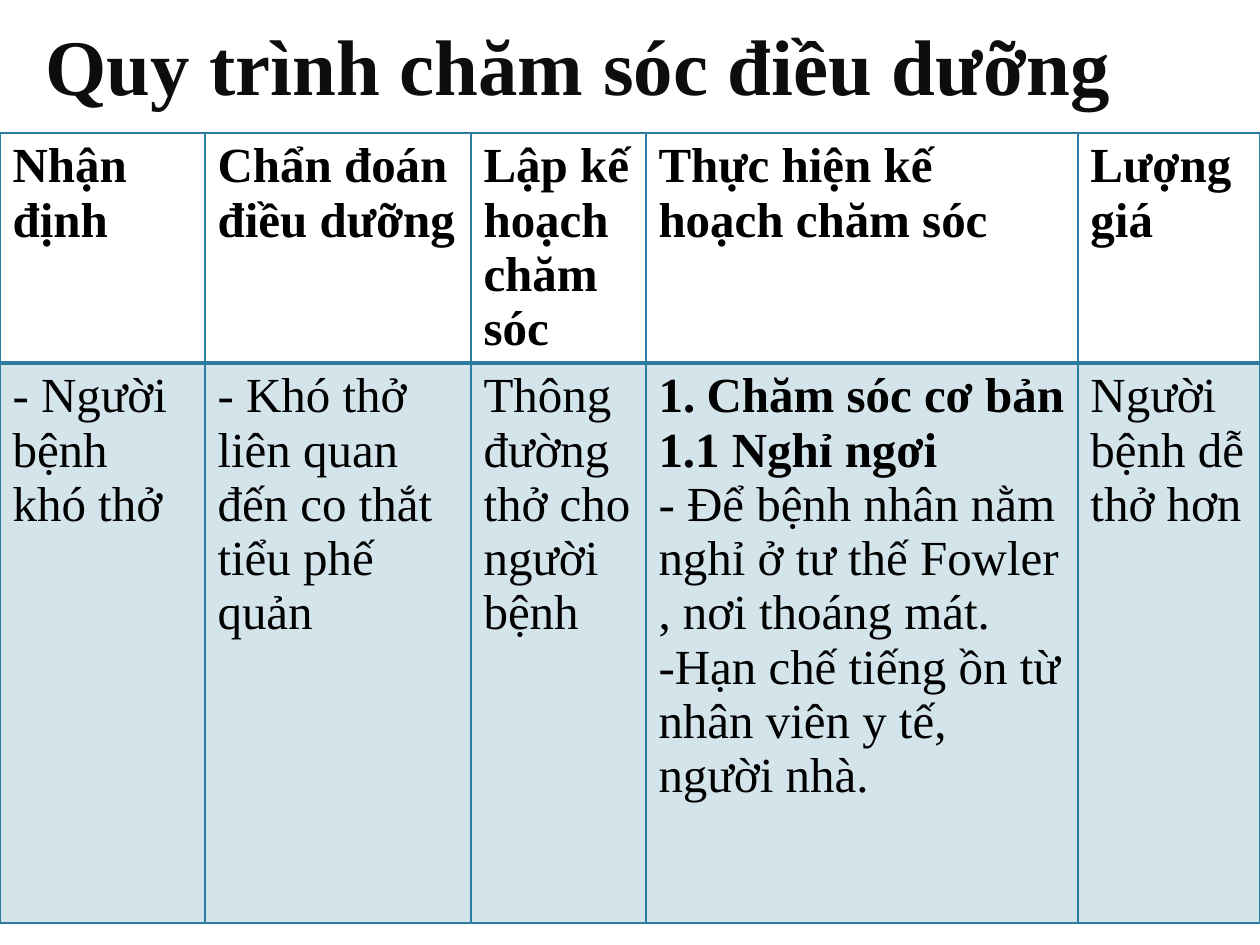
from lxml import etree
from pptx import Presentation
from pptx.dml.color import RGBColor
from pptx.enum.text import MSO_ANCHOR, MSO_AUTO_SIZE, PP_ALIGN
from pptx.oxml.ns import qn
from pptx.util import Emu, Pt

BOTTOM, JUSTIFY = MSO_ANCHOR.BOTTOM, PP_ALIGN.JUSTIFY
NO_FIT = MSO_AUTO_SIZE.NONE
PX = 914400 // 126
FONT = "Times New Roman"
COLORS = {"title": "0D0D0D", "text": "000000", "accent": "2C7C9F"}

TITLE = "Quy trình chăm sóc điều dưỡng"
TITLE_BOX = {"left": 33, "top": 0, "width": 1109, "height": 118}
HEADERS = ["Nhận định", "Chẩn đoán điều dưỡng", "Lập kế hoạch chăm sóc",
           "Thực hiện kế hoạch chăm sóc", "Lượng giá"]
BODY = [
    [("- Người bệnh khó thở", "plain")],
    [("- Khó thở liên quan đến co thắt tiểu phế quản", "plain")],
    [("Thông đường thở cho người bệnh", "plain")],
    [("Chăm sóc cơ bản", "numbered"),
     ("1.1 Nghỉ ngơi", "bold"),
     ("- Để bệnh nhân nằm nghỉ ở tư thế Fowler , nơi thoáng mát.", "plain"),
     ("-Hạn chế tiếng ồn từ nhân viên y tế, người nhà.", "plain")],
    [("Người bệnh dễ thở hơn", "plain")],
]
ROWS = [[[(h, "bold")] for h in HEADERS], BODY]
TABLE_TOP = 133
COL_WIDTHS = [205, 266, 175, 432, 182]
ROW_HEIGHTS = [230, 560]
NUMBER_INDENT = 48
BORDERS = [{"L": 1, "R": 1, "T": 1, "B": 2}, {"L": 1, "R": 1, "T": 2, "B": 1}]


def px(n):
    return Emu(n * PX)


def style(font, size, bold, color):
    for key, value in {"name": FONT, "size": Pt(size), "bold": bold}.items():
        setattr(font, key, value)
    font.color.rgb = RGBColor.from_string(COLORS[color])


def number(p):
    pPr = p._p.get_or_add_pPr()
    pPr.set("marL", str(px(NUMBER_INDENT)))
    pPr.set("indent", str(-px(NUMBER_INDENT)))
    etree.SubElement(pPr, qn("a:buAutoNum"), type="arabicPeriod")


def add_borders(cell, widths):
    tcPr = cell._tc.get_or_add_tcPr()
    for side, width in widths.items():
        ln = etree.SubElement(tcPr, qn(f"a:ln{side}"), w=str(Pt(width)))
        fill = etree.SubElement(ln, qn("a:solidFill"))
        etree.SubElement(fill, qn("a:srgbClr"), val=COLORS["accent"])


def tint(cell, percent):
    cell.fill.solid()
    cell.fill.fore_color.rgb = RGBColor.from_string(COLORS["accent"])
    color = cell._tc.tcPr.find(qn("a:solidFill")).find(qn("a:srgbClr"))
    etree.SubElement(color, qn("a:alpha"), val=str(percent * 1000))


def write(cell, paragraphs):
    tf = cell.text_frame
    for i, (text, kind) in enumerate(paragraphs):
        p = tf.add_paragraph() if i else tf.paragraphs[0]
        if kind == "numbered":
            number(p)
        r = p.add_run()
        r.text = text
        style(r.font, 28, kind != "plain", "text")


prs = Presentation()
prs.slide_width, prs.slide_height = px(1260), px(945)
s = prs.slides.add_slide(prs.slide_layouts[5])

title = s.shapes.title
for key, value in TITLE_BOX.items():
    setattr(title, key, px(value))
tf = title.text_frame
for key, value in {"vertical_anchor": BOTTOM, "word_wrap": True, "auto_size": NO_FIT}.items():
    setattr(tf, key, value)
p = tf.paragraphs[0]
p.alignment = JUSTIFY
r = p.add_run()
r.text = TITLE
style(r.font, 45, True, "title")

table = s.shapes.add_table(len(ROWS), len(HEADERS), 0, px(TABLE_TOP),
                           px(sum(COL_WIDTHS)), px(sum(ROW_HEIGHTS))).table
table.horz_banding = False
for col, width in zip(table.columns, COL_WIDTHS):
    col.width = px(width)
for i, (row, height) in enumerate(zip(table.rows, ROW_HEIGHTS)):
    row.height = px(height)
    for cell, paragraphs in zip(row.cells, ROWS[i]):
        write(cell, paragraphs)
        add_borders(cell, BORDERS[i])
        if i:
            tint(cell, 20)
        else:
            cell.fill.background()

prs.save("out.pptx")
